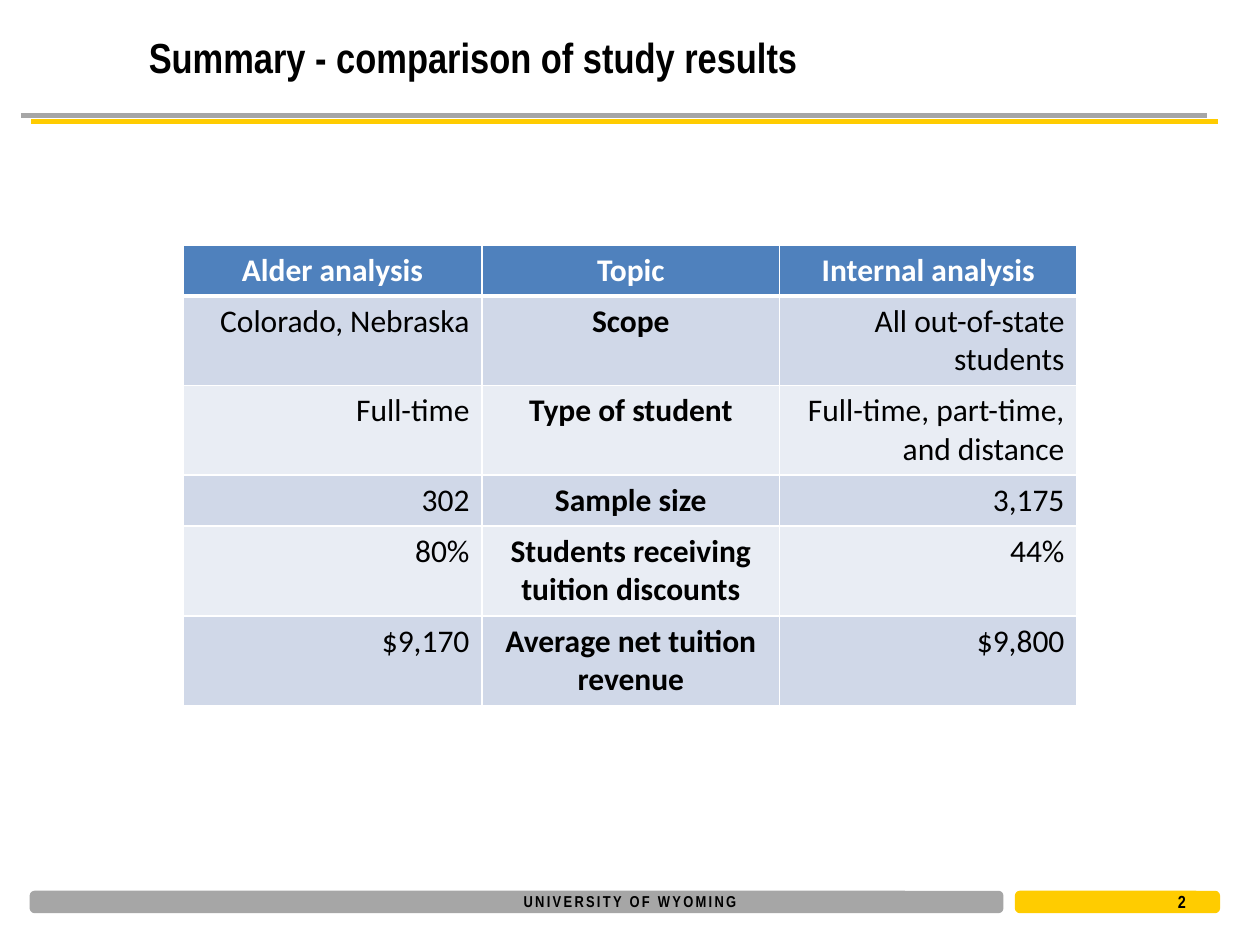
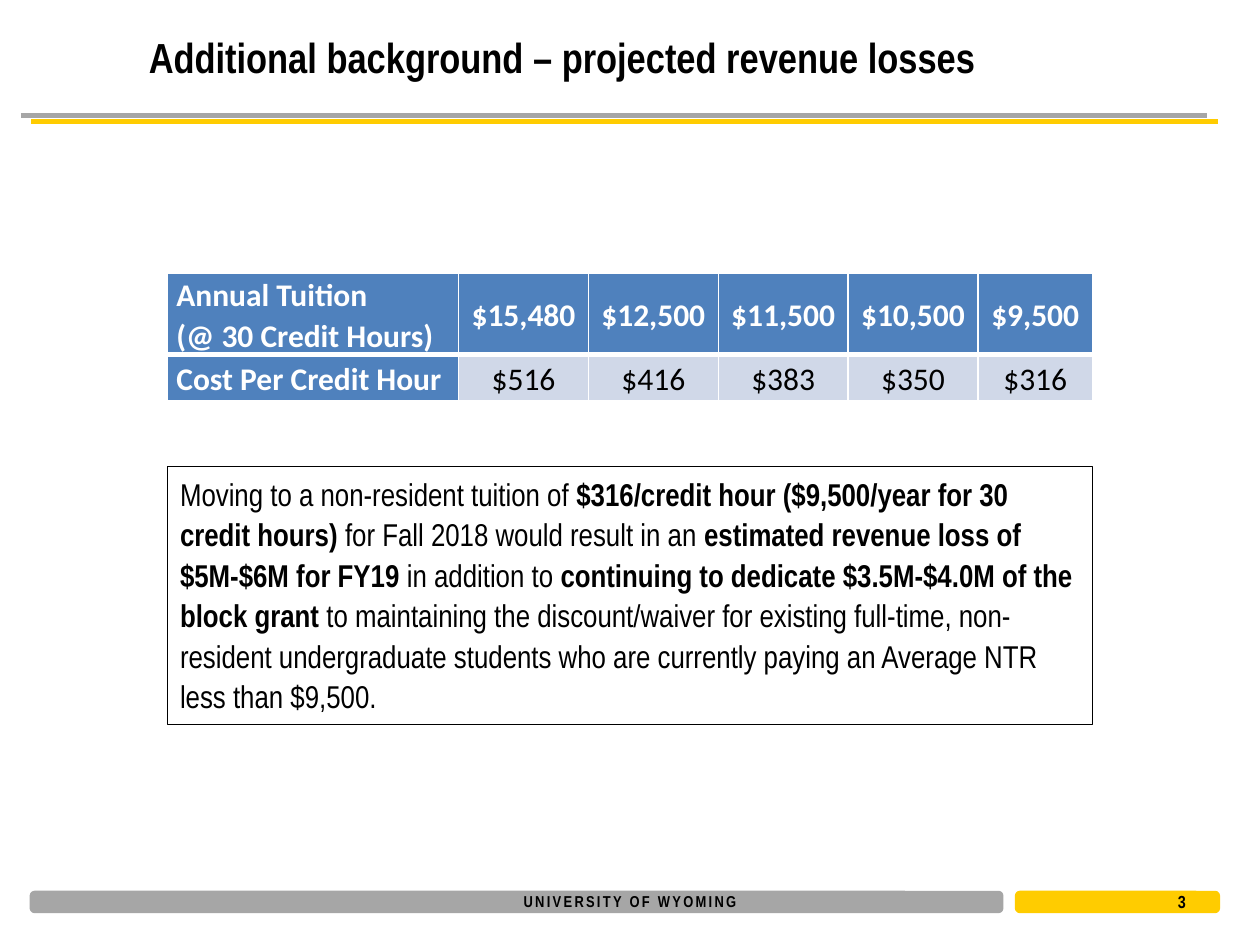
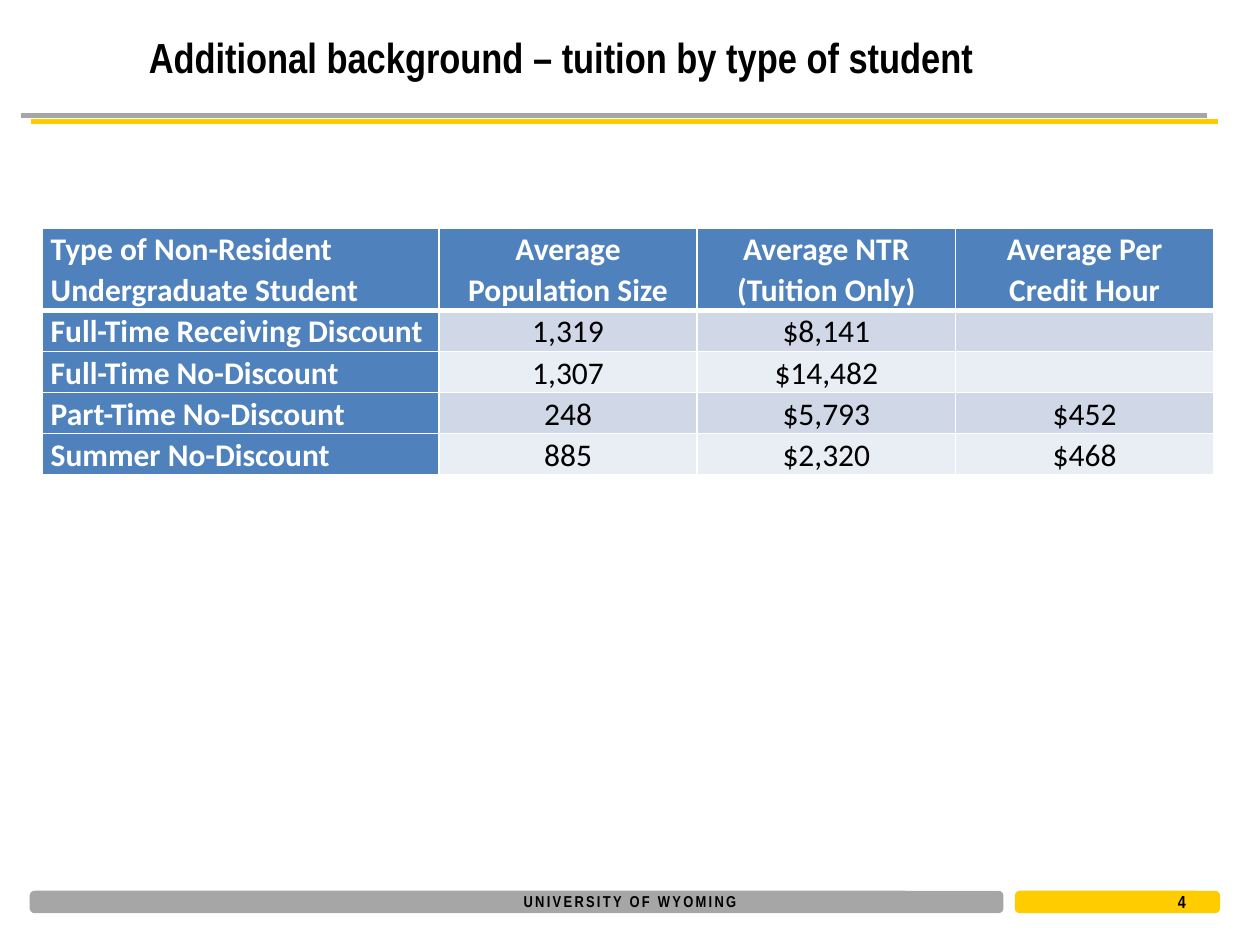
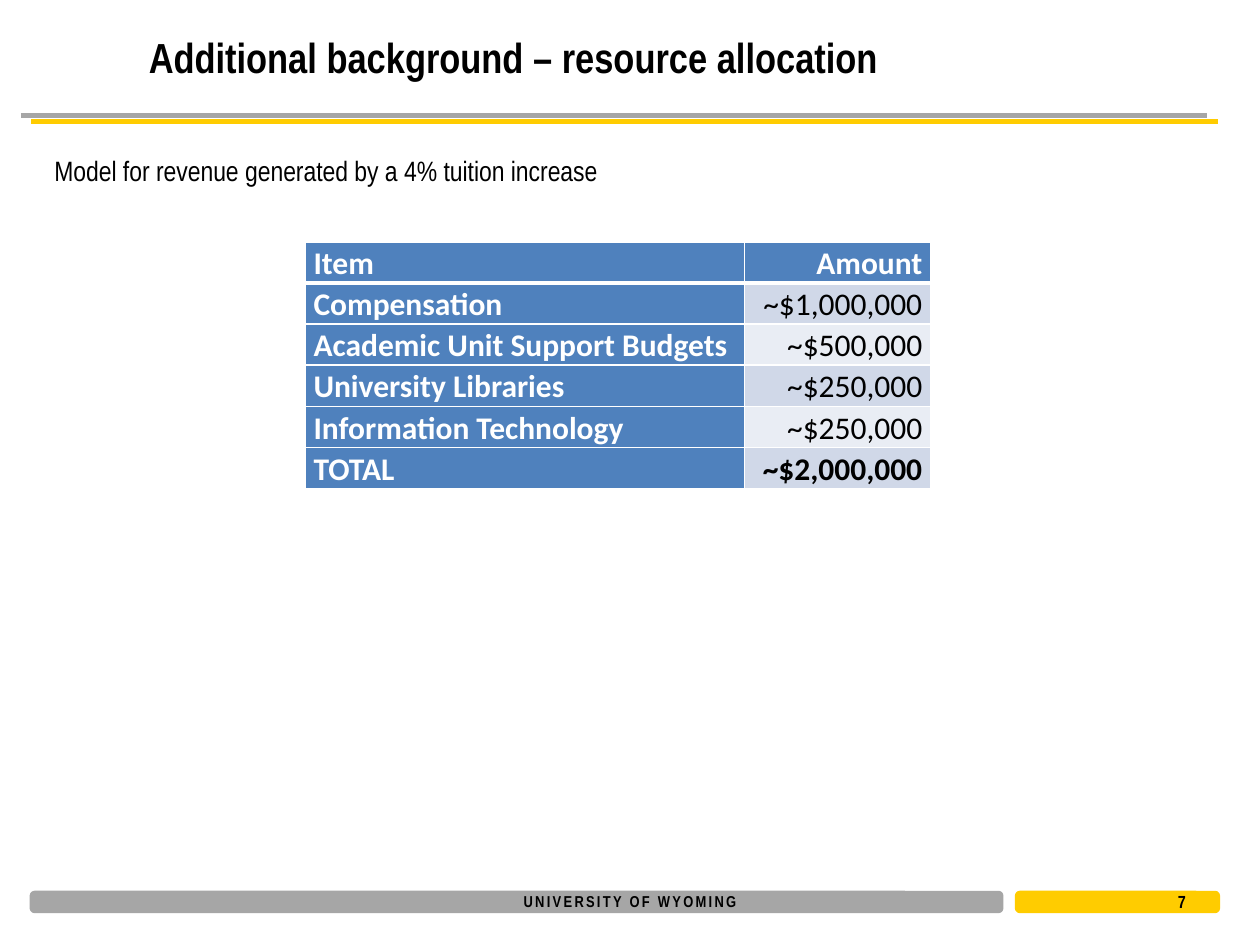
from lxml import etree
from pptx import Presentation
from pptx.dml.color import RGBColor
from pptx.enum import shapes, text
from pptx.oxml import ns
from pptx.util import Pt

COLORS = {
    "black": "000000",
    "white": "FFFFFF",
    "gray": "A6A6A6",
    "gold": "FFCC00",
    "blue": "4F81BD",
    "band_dark": "D0D8E8",
    "band_light": "E9EDF4",
}
ALIGN = {"l": text.PP_ALIGN.LEFT, "c": text.PP_ALIGN.CENTER, "r": text.PP_ALIGN.RIGHT}
TOP, MIDDLE = text.MSO_ANCHOR.TOP, text.MSO_ANCHOR.MIDDLE


def rgb(name):
    return RGBColor.from_string(COLORS[name])


def add_color(parent, name):
    etree.SubElement(parent, ns.qn("a:srgbClr"), val=COLORS[name])


class Deck:
    """Holds the style and the current slide."""

    body_font, table_font = "Arial Narrow", "Calibri"

    def __init__(self):
        self.prs = Presentation()
        self.prs.slide_width, self.prs.slide_height = Pt(720), Pt(540)
        self.layout = self.prs.slide_layouts[5]
        self.s = None

    def slide(self, title, number):
        first = self.s is None
        self.s = self.prs.slides.add_slide(self.layout)
        if first:
            self.frame()
        sp = self.s.shapes.title
        sp.left, sp.top, sp.width, sp.height = Pt(77.8), Pt(10.8), Pt(630), Pt(43.2)
        tf = sp.text_frame
        tf.auto_size = text.MSO_AUTO_SIZE.NONE
        tf.vertical_anchor = MIDDLE
        self.paragraph(tf.paragraphs[0], [(title, True)], 24)
        self.textbox(666, 508.5, 36, 13.5, str(number), 10, bold=True, anchor=MIDDLE)

    def frame(self):
        """Draw the rule and footer bands, then move them to the shared layout."""
        parts = [
            self.title_rule(),
            self.footer_band(18, 554.4, "gray"),
            self.footer_band(581, 115.2, "gold"),
            self.footer_name(),
        ]
        for sp in parts:
            self.layout.shapes.element.append(sp.element)

    def footer_name(self):
        """Spaced-out name on one line; without side margins it fits its box."""
        sp = self.textbox(295.2, 506.2, 129.6, 18, "UNIVERSITY OF WYOMING", 9,
                          bold=True, align="c", anchor=MIDDLE)
        tf = sp.text_frame
        tf.word_wrap = False
        tf.margin_left = tf.margin_right = 0
        tf.paragraphs[0].runs[0].font._element.set("spc", "130")
        return sp

    def title_rule(self):
        """Gray line with a hard gold shadow."""
        line = self.s.shapes.add_connector(
            shapes.MSO_CONNECTOR.STRAIGHT, Pt(12), Pt(66.2), Pt(690), Pt(66.2))
        line.line.color.rgb = rgb("gray")
        line.line.width = Pt(3)
        effects = etree.SubElement(line.element.spPr, ns.qn("a:effectLst"))
        shadow = etree.SubElement(effects, ns.qn("a:outerShdw"), blurRad="0",
                                  dist=str(Pt(6.7)), dir=str(27 * 60000),
                                  algn="ctr", rotWithShape="0")
        add_color(shadow, "gold")
        return line

    def footer_band(self, x, w, color):
        sp = self.s.shapes.add_shape(
            shapes.MSO_SHAPE.ROUNDED_RECTANGLE, Pt(x), Pt(510), Pt(w), Pt(10.8))
        sp.shadow.inherit = False
        sp.fill.solid()
        sp.fill.fore_color.rgb = rgb(color)
        sp.line.color.rgb = rgb(color)
        sp.line.width = Pt(2)
        return sp

    def paragraph(self, p, runs, size, font=body_font, color="black", align="l"):
        """Fill a paragraph with (text, bold) runs."""
        p.alignment = ALIGN[align]
        for words, bold in runs:
            r = p.add_run()
            r.text = words
            r.font.name, r.font.size, r.font.bold = font, Pt(size), bold
            r.font.color.rgb = rgb(color)

    def textbox(self, x, y, w, h, words, size, bold=False, align="l", anchor=TOP):
        sp = self.s.shapes.add_textbox(Pt(x), Pt(y), Pt(w), Pt(h))
        tf = sp.text_frame
        tf.word_wrap = True
        tf.vertical_anchor = anchor
        self.paragraph(tf.paragraphs[0], [(words, bold)], size, align=align)
        return sp

    def callout(self, x, y, w, h, runs):
        """Outlined box with one paragraph."""
        sp = self.s.shapes.add_shape(
            shapes.MSO_SHAPE.RECTANGLE, Pt(x), Pt(y), Pt(w), Pt(h))
        sp.shadow.inherit = False
        sp.fill.background()
        sp.line.color.rgb = rgb("black")
        sp.line.width = Pt(0.75)
        tf = sp.text_frame
        tf.word_wrap = True
        tf.auto_size = text.MSO_AUTO_SIZE.SHAPE_TO_FIT_TEXT
        tf.vertical_anchor = TOP
        p = tf.paragraphs[0]
        p.line_spacing, p.space_after = 1.07, Pt(8)
        self.paragraph(p, runs, 18)

    def table(self, x, y, widths, heights, rows, align, head_align=None,
              compact=True, bold_cells=()):
        """Banded table; a compact one has tight cells and a blue first column."""
        tbl = self.s.shapes.add_table(len(rows), len(widths), Pt(x), Pt(y),
                                      Pt(sum(widths)), Pt(sum(heights))).table
        tbl.first_col = compact
        for col, w in zip(tbl.columns, widths):
            col.width = Pt(w)
        for i, (row, h) in enumerate(zip(rows, heights)):
            tbl.rows[i].height = Pt(h)
            aligns = align if i else head_align or align
            for j, words in enumerate(row):
                cell = tbl.cell(i, j)
                heading = i == 0 or (compact and j == 0)
                band = "band_dark" if i % 2 else "band_light"
                cell.fill.solid()
                cell.fill.fore_color.rgb = rgb("blue" if heading else band)
                self.borders(cell, i)
                if compact:
                    cell.vertical_anchor = MIDDLE
                    cell.margin_left = cell.margin_right = Pt(5)
                    cell.margin_top = cell.margin_bottom = 0
                tf = cell.text_frame
                for n, part in enumerate(words.split("\n") if words else []):
                    p = tf.add_paragraph() if n else tf.paragraphs[0]
                    if compact:
                        p.line_spacing = 1.07
                    self.paragraph(p, [(part, heading or (i, j) in bold_cells)], 18,
                                   self.table_font, "white" if heading else "black",
                                   aligns[j])

    def borders(self, cell, row):
        """White cell edges, thick between the header and the first row."""
        tc_pr = cell._tc.get_or_add_tcPr()
        thick = {0: "B", 1: "T"}.get(row)
        for n, side in enumerate("LRTB"):
            width = Pt(3 if side == thick else 1)
            ln = etree.Element(ns.qn(f"a:ln{side}"), w=str(width))
            add_color(etree.SubElement(ln, ns.qn("a:solidFill")), "white")
            tc_pr.insert(n, ln)


def main():
    deck = Deck()

    deck.slide("Summary - comparison of study results", 2)
    comparison = [
        ("Alder analysis", "Topic", "Internal analysis"),
        ("Colorado, Nebraska", "Scope", "All out-of-state students"),
        ("Full-time", "Type of student", "Full-time, part-time, and distance"),
        ("302", "Sample size", "3,175"),
        ("80%", "Students receiving tuition discounts", "44%"),
        ("$9,170", "Average net tuition revenue", "$9,800"),
    ]
    one_line, two_lines = 29.2, 51.2
    deck.table(104.5, 139.9, [171, 170, 170],
               [one_line, two_lines, two_lines, one_line, two_lines, two_lines],
               comparison, "rcr", head_align="ccc", compact=False,
               bold_cells=[(i, 1) for i in range(1, len(comparison))])

    deck.slide("Additional background – projected revenue losses", 3)
    deck.table(95.8, 156.2, [166.3] + [74.2] * 4 + [65.5], [46.5, 26.6], [
        ("Annual Tuition\n(@ 30 Credit Hours)",
         "$15,480", "$12,500", "$11,500", "$10,500", "$9,500"),
        ("Cost Per Credit Hour", "$516", "$416", "$383", "$350", "$316"),
    ], "lccccc")
    deck.callout(95.8, 266.4, 528.5, 147.6, [
        ("Moving to a non-resident tuition of ", False),
        ("$316/credit hour ($9,500/year for 30 credit hours)", True),
        (" for Fall 2018 would result in an ", False),
        ("estimated revenue loss of $5M-$6M for FY19", True),
        (" in addition to ", False),
        ("continuing to dedicate $3.5M-$4.0M of the block grant", True),
        (" to maintaining the discount/waiver for existing full-time, non-resident "
         "undergraduate students who are currently paying an Average NTR less than "
         "$9,500.", False),
    ])

    deck.slide("Additional background – tuition by type of student", 4)
    deck.table(24, 130.3, [226.8] + [147.6] * 3, [47] + [23.5] * 4, [
        ("Type of Non-Resident Undergraduate Student", "Average Population Size",
         "Average NTR (Tuition Only)", "Average Per Credit Hour"),
        ("Full-Time Receiving Discount", "1,319", "$8,141", ""),
        ("Full-Time No-Discount", "1,307", "$14,482", ""),
        ("Part-Time No-Discount", "248", "$5,793", "$452"),
        ("Summer No-Discount", "885", "$2,320", "$468"),
    ], "lccc")

    deck.slide("Additional background – resource allocation", 7)
    deck.table(174.2, 138.2, [251.3, 106.6], [23.5] * 6, [
        ("Item", "Amount"),
        ("Compensation", "~$1,000,000"),
        ("Academic Unit Support Budgets", "~$500,000"),
        ("University Libraries", "~$250,000"),
        ("Information Technology", "~$250,000"),
        ("TOTAL", "~$2,000,000"),
    ], "lr", bold_cells=[(5, 1)])
    deck.textbox(24, 84.2, 669.6, 46,
                 "Model for revenue generated by a 4% tuition increase", 16)

    deck.prs.save("out.pptx")


if __name__ == "__main__":
    main()
